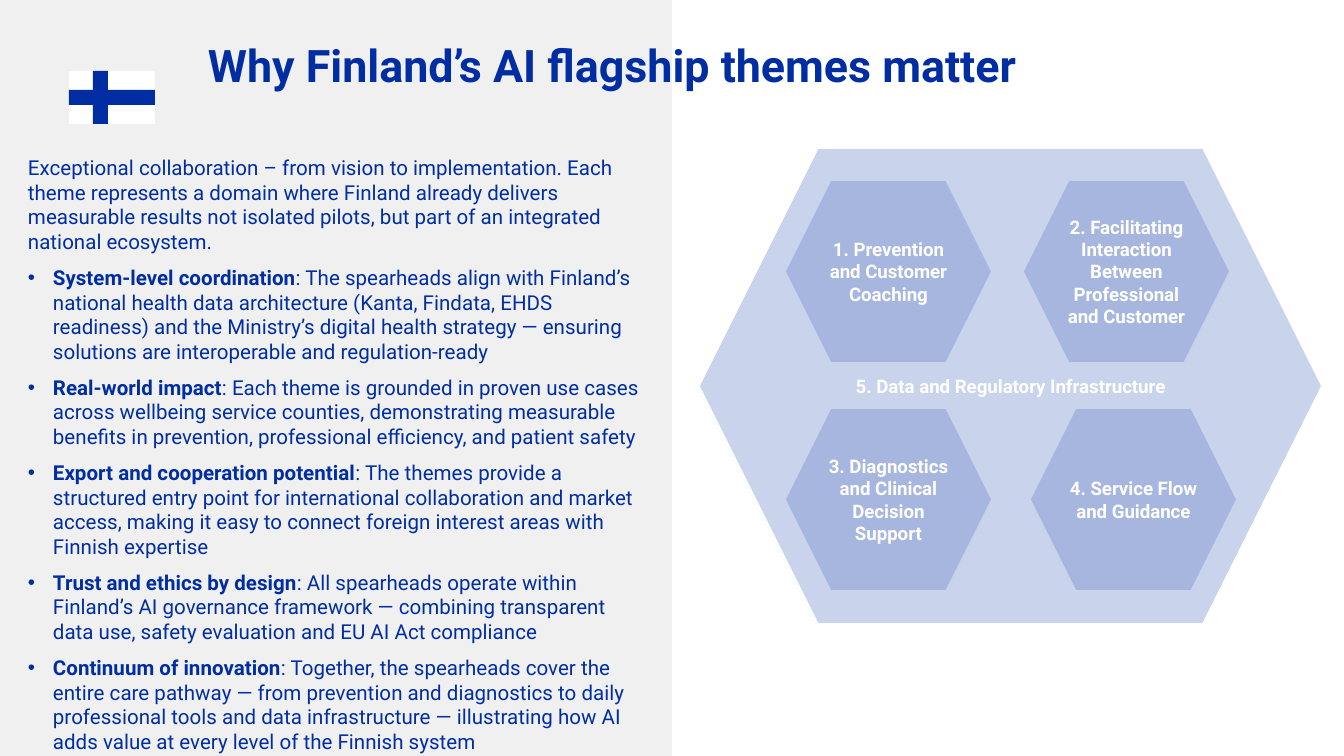
from lxml.etree import SubElement
from pptx import Presentation
from pptx.dml.color import RGBColor
from pptx.enum.shapes import MSO_SHAPE as Shape
from pptx.enum.text import MSO_ANCHOR as Anchor, PP_ALIGN as Align
from pptx.oxml.ns import qn
from pptx.util import Emu, Pt

WIDTH, HEIGHT = 1344, 756
EMU_PER_PX = 9144000 / WIDTH
FONT = "Roboto"
BLUE = RGBColor(0x00, 0x2E, 0xA2)
WHITE = RGBColor(0xFF, 0xFF, 0xFF)
PANEL_GREY = RGBColor(0xF0, 0xF0, 0xF0)
PALE_BLUE = RGBColor(0xCA, 0xD3, 0xEC)
MID_BLUE = RGBColor(0xA6, 0xB6, 0xDF)

TITLE = "Why Finland’s AI flagship themes matter"
INTRO = (
    "Exceptional collaboration – from vision to implementation. Each theme represents "
    "a domain where Finland already delivers measurable results not isolated pilots, "
    "but part of an integrated national ecosystem."
)
REASONS = [
    ("System-level coordination",
     "The spearheads align with Finland’s national health data architecture (Kanta, "
     "Findata, EHDS readiness) and the Ministry’s digital health strategy — ensuring "
     "solutions are interoperable and regulation-ready"),
    ("Real-world impact",
     "Each theme is grounded in proven use cases across wellbeing service counties, "
     "demonstrating measurable benefits in prevention, professional efficiency, and "
     "patient safety"),
    ("Export and cooperation potential",
     "The themes provide a structured entry point for international collaboration and "
     "market access, making it easy to connect foreign interest areas with Finnish "
     "expertise"),
    ("Trust and ethics by design",
     "All spearheads operate within Finland’s AI governance framework — combining "
     "transparent data use, safety evaluation and EU AI Act compliance"),
    ("Continuum of innovation",
     "Together, the spearheads cover the entire care pathway — from prevention and "
     "diagnostics to daily professional tools and data infrastructure — illustrating "
     "how AI adds value at every level of the Finnish system"),
]
FOUNDATION = "5. Data and Regulatory Infrastructure"
# Each row of themes: top, then (left, label) pairs
THEME_ROWS = [
    (181, [(786, "1. Prevention and Customer Coaching"),
           (1024, "2. Facilitating Interaction Between Professional and Customer")]),
    (409, [(786, "3. Diagnostics and Clinical Decision Support"),
           (1031, "4. Service Flow and Guidance")]),
]
THEME_SIZE = (205, 181)
FLAG = (69, 71, 86, 53)
CROSS_X, CROSS_Y = (24, 39), (19, 34)  # bar edges within the flag


def px(length):
    return Emu(round(length * EMU_PER_PX))


def paint(shape, color):
    shape.shadow.inherit = False
    shape.fill.solid()
    shape.fill.fore_color.rgb = color
    shape.line.fill.background()


def set_insets(frame, side, end):
    frame.word_wrap = True
    frame.margin_left = frame.margin_right = px(side)
    frame.margin_top = frame.margin_bottom = px(end)


def style_run(run, size, color=BLUE, bold=False):
    font = run.font
    font.name, font.size, font.bold = FONT, Pt(size), bold
    font.color.rgb = color


def add_block(shapes, kind, box, color):
    block = shapes.add_shape(kind, *map(px, box))
    paint(block, color)
    return block


def add_hexagon(shapes, box, color, label):
    frame = add_block(shapes, Shape.HEXAGON, box, color).text_frame
    set_insets(frame, 0, 4)
    frame.vertical_anchor = Anchor.MIDDLE
    frame.text = label
    frame.paragraphs[0].alignment = Align.CENTER
    style_run(frame.paragraphs[0].runs[0], 10, WHITE, True)


def add_title(shapes, box):
    frame = shapes.add_textbox(*map(px, box)).text_frame
    set_insets(frame, 0, 0)
    frame.text = TITLE
    style_run(frame.paragraphs[0].runs[0], 24, bold=True)


def add_flag(shapes):
    left, top, width, height = FLAG
    add_block(shapes, Shape.RECTANGLE, FLAG, WHITE)
    (x1, x2), (y1, y2) = CROSS_X, CROSS_Y
    outline = [(x1, 0), (x1, y1), (0, y1), (0, y2), (x1, y2), (x1, height),
               (x2, height), (x2, y2), (width, y2), (width, y1), (x2, y1), (x2, 0)]
    corners = [(left + x, top + y) for x, y in outline]
    builder = shapes.build_freeform(*corners[0], scale=EMU_PER_PX)
    builder.add_line_segments(corners[1:], close=True)
    paint(builder.convert_to_shape(), BLUE)


def add_bullet(paragraph, indent):
    properties = paragraph._p.get_or_add_pPr()
    properties.set("marL", str(px(indent)))
    properties.set("indent", str(-px(indent)))
    SubElement(properties, qn("a:buFont")).set("typeface", "Arial")
    SubElement(properties, qn("a:buChar")).set("char", "•")


def add_reasons(shapes, box):
    frame = shapes.add_textbox(*map(px, box)).text_frame
    set_insets(frame, 5, 5)
    frame.text = INTRO
    style_run(frame.paragraphs[0].runs[0], 11)
    for name, detail in REASONS:
        paragraph = frame.add_paragraph()
        add_bullet(paragraph, 25)
        paragraph.space_before = Pt(6)
        for text, bold in ((name, True), (f": {detail}", False)):
            run = paragraph.add_run()
            run.text = text
            style_run(run, 11, bold=bold)


def main():
    deck = Presentation()
    deck.slide_width, deck.slide_height = px(WIDTH), px(HEIGHT)
    shapes = deck.slides.add_slide(deck.slide_layouts[6]).shapes

    add_hexagon(shapes, (700, 149, 621, 474), PALE_BLUE, FOUNDATION)
    add_block(shapes, Shape.RECTANGLE, (0, 0, WIDTH // 2, HEIGHT), PANEL_GREY)
    add_title(shapes, (208, 38, 863, 67))
    add_flag(shapes)
    add_reasons(shapes, (23, 150, 624, 564))
    for top, themes in THEME_ROWS:
        for left, label in themes:
            add_hexagon(shapes, (left, top, *THEME_SIZE), MID_BLUE, label)

    deck.save("out.pptx")


if __name__ == "__main__":
    main()
